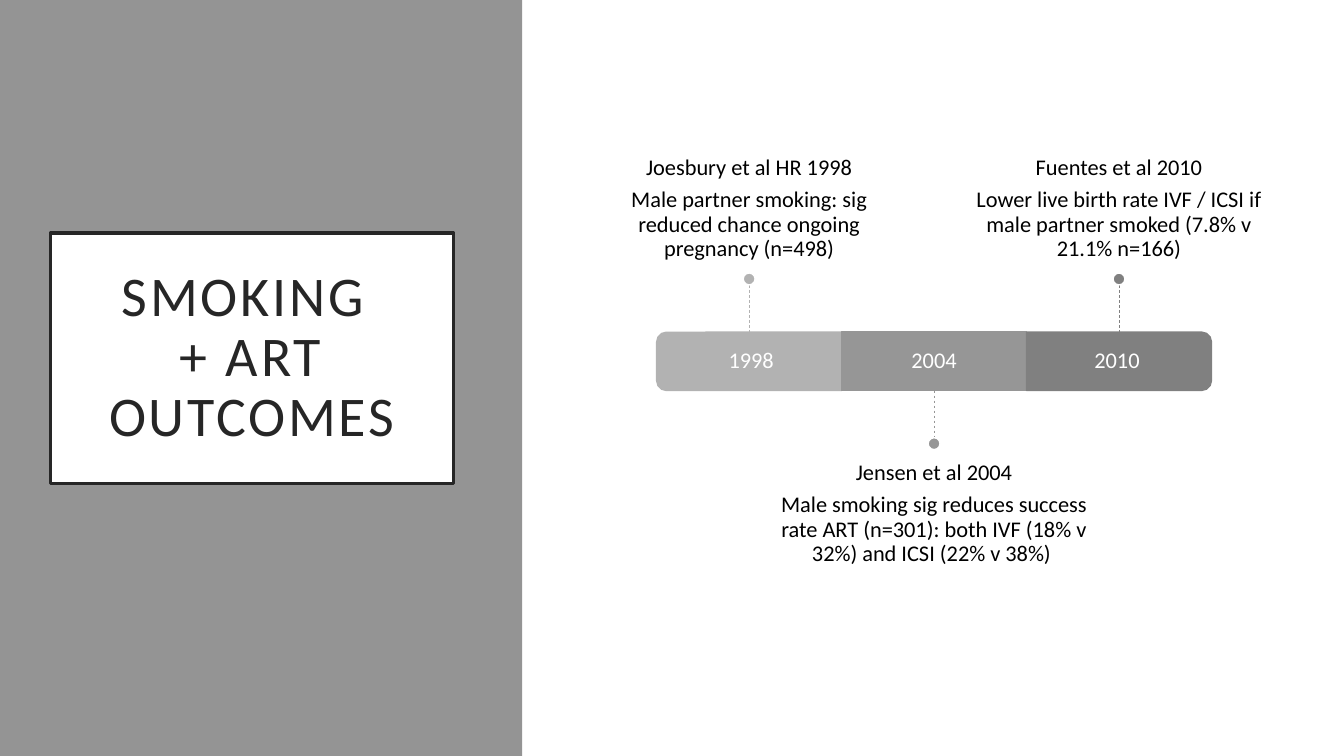
from pptx import Presentation
from pptx import util as u
from pptx.dml.color import RGBColor
from pptx.enum import dml, shapes, text
from pptx.oxml.ns import qn
from lxml import etree

WHITE, BLACK, INK, GREY = "FFFFFF", "000000", "262626", "949494"
FORM = shapes.MSO_SHAPE
ANCHOR = text.MSO_ANCHOR


def shade(code):
    return RGBColor.from_string(code)


class Page:
    """Style and current slide."""
    font, size = "Calibri", 16

    def __init__(self, deck):
        self.slide = deck.slides.add_slide(deck.slide_layouts[5])
        self.items = self.slide.shapes

    def paint(self, item, fill, line=None, width=1.0):
        item.fill.solid()
        item.fill.fore_color.rgb = shade(fill)
        if line:
            item.line.color.rgb = shade(line)
            item.line.width = u.Pt(width)
        else:
            item.line.fill.background()

    def shape(self, form, x, y, w, h, fill, line=None, turn=0):
        item = self.items.add_shape(form, u.Cm(x), u.Cm(y), u.Cm(w), u.Cm(h))
        item.shadow.inherit = False
        item.rotation = turn
        self.paint(item, fill, line)
        return item

    def words(self, item, copy, color, size, anchor, pads, after=0):
        frame = item.text_frame
        frame.text = copy
        frame.word_wrap = True
        frame.auto_size = text.MSO_AUTO_SIZE.NONE
        frame.vertical_anchor = anchor
        (frame.margin_left, frame.margin_top,
         frame.margin_right, frame.margin_bottom) = map(u.Cm, pads)
        for para in frame.paragraphs:
            para.alignment = text.PP_ALIGN.CENTER
            para.line_spacing = 0.9
            para.space_before = u.Pt(0)
            para.space_after = u.Pt(after)
            for run in para.runs:
                run.font.name = self.font
                run.font.size = u.Pt(size)
                run.font.color.rgb = shade(color)

    def label(self, copy, x, y, w, h, color, anchor, pads):
        box = self.items.add_textbox(u.Cm(x), u.Cm(y), u.Cm(w), u.Cm(h))
        self.words(box, copy, color, self.size, anchor, pads, after=5.6)

    def title(self, copy, x, y, w, h):
        item = self.items.title
        item.left, item.top, item.width, item.height = map(u.Cm, (x, y, w, h))
        self.paint(item, WHITE, INK, 2.5)
        self.words(item, copy, INK, 40, ANCHOR.MIDDLE, [0.5] * 4)
        for props in item.element.iter(qn("a:rPr")):
            props.set("spc", "200")
        return item

    def stem(self, x, top, end, color):
        line = self.items.add_connector(
            shapes.MSO_CONNECTOR.STRAIGHT, u.Cm(x), u.Cm(top), u.Cm(x), u.Cm(end))
        line.line.color.rgb = shade(color)
        line.line.width = u.Pt(0.5)
        line.line.dash_style = dml.MSO_LINE.DASH
        etree.SubElement(line.element.spPr, qn("a:effectLst"))


# Timeline measures in cm
FIRST, STEP = 18.88, 4.66
TOP, HIGH = 8.37, 1.47
STEM, DOT, PAD = 1.19, 0.3, 0.33
NOTE_W, NOTE_H = 7.75, 5.13
STUDIES = [
    ("1998", "B2B2B2", 270, "Joesbury et al HR 1998",
     "Male partner smoking: sig reduced chance ongoing pregnancy (n=498)"),
    ("2004", "969696", 0, "Jensen et al 2004",
     "Male smoking sig reduces success rate ART (n=301): both IVF (18% v 32%) and ICSI (22% v 38%) "),
    ("2010", "808080", 90, "Fuentes et al 2010",
     "Lower live birth rate IVF / ICSI if male partner smoked (7.8% v 21.1% n=166)"),
]


def study(page, i, year, color, turn, head, body):
    mid, base = FIRST + i * STEP, TOP + HIGH
    center = TOP + HIGH / 2

    # Bar segment: the end pieces are turned so the round side faces out
    if turn:
        page.shape(FORM.ROUND_2_SAME_RECTANGLE, mid - HIGH / 2, center - STEP / 2,
                   HIGH, STEP, color, color, turn)
    else:
        page.shape(FORM.RECTANGLE, mid - STEP / 2, TOP, STEP, HIGH, color, color)
    page.label(year, mid - STEP / 2 + 0.05 * (1 - i), TOP, STEP, HIGH,
               WHITE, ANCHOR.MIDDLE, [PAD] * 4)

    # Note, stem and dot: above the bar for even, below for odd
    if i % 2 == 0:
        note, anchor, pads = 1.78, ANCHOR.BOTTOM, [0, 0, 0, PAD]
        start, dot = TOP - STEM, TOP - STEM - DOT
    else:
        note, anchor, pads = 11.3, ANCHOR.TOP, [0, PAD, 0, 0]
        start, dot = base, base + STEM
    page.label(f"{head}\n{body}", mid - NOTE_W / 2, note, NOTE_W, NOTE_H,
               BLACK, anchor, pads)
    page.stem(mid, start, start + STEM, color)
    page.shape(FORM.OVAL, mid - DOT / 2, dot, DOT, DOT, color, WHITE)


def main():
    deck = Presentation()
    deck.slide_width, deck.slide_height = u.Cm(33.87), u.Cm(19.05)
    page = Page(deck)

    # Panels and title
    side = page.shape(FORM.RECTANGLE, 0, 0, 13.16, 19.05, GREY)
    title = page.title("SMOKING \v+ ART OUTCOMES", 1.27, 5.87, 10.16, 6.32)
    title.element.addprevious(side.element)
    page.shape(FORM.RECTANGLE, 13.2, 0, 20.67, 19.05, WHITE)

    # Timeline
    for i, row in enumerate(STUDIES):
        study(page, i, *row)
    deck.save("out.pptx")


if __name__ == "__main__":
    main()
